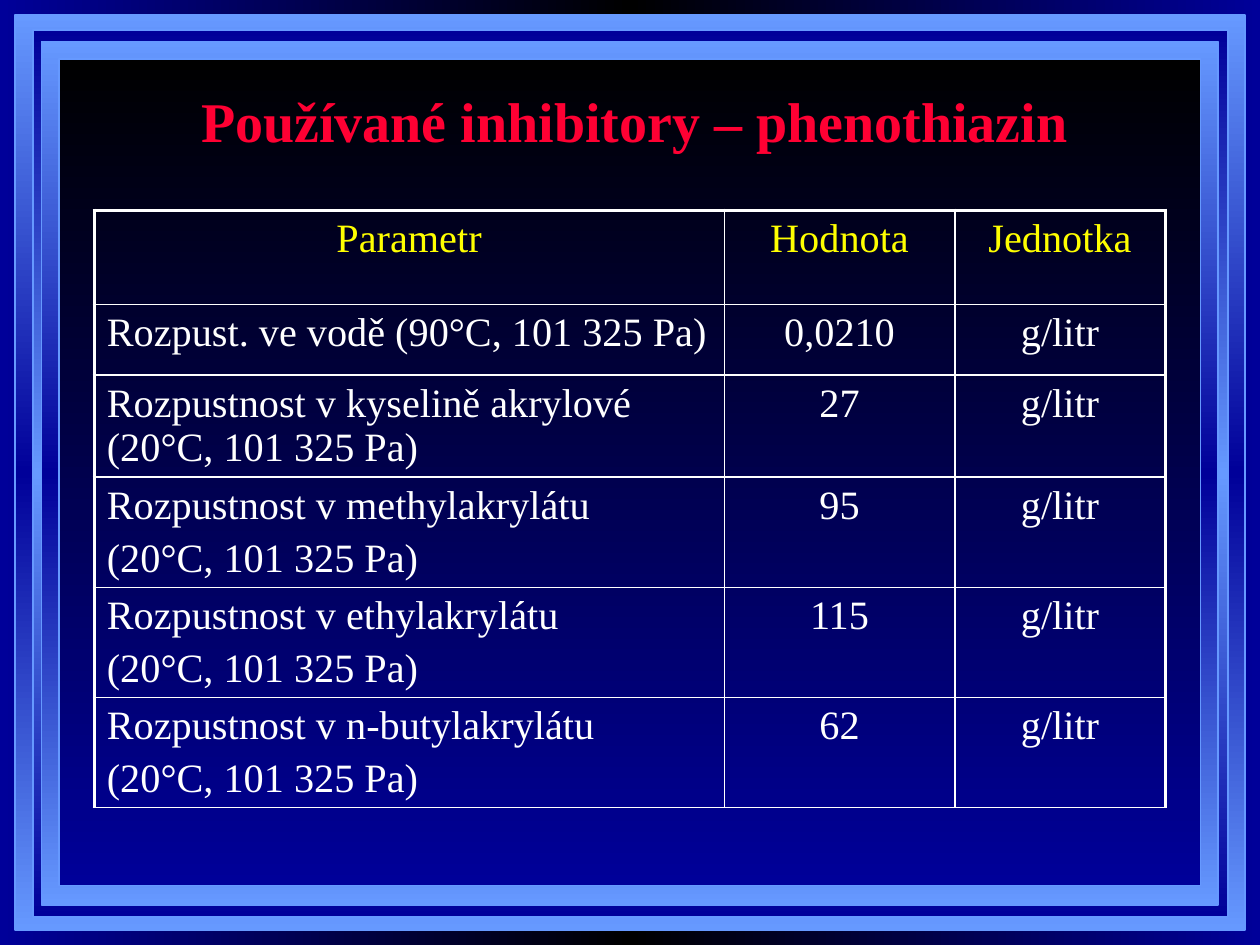
from copy import deepcopy

from lxml.etree import SubElement
from pptx import Presentation
from pptx.dml.color import RGBColor
from pptx.enum.shapes import MSO_SHAPE as Shape
from pptx.enum.text import MSO_ANCHOR as Anchor, MSO_AUTO_SIZE as AutoSize, PP_ALIGN as Align
from pptx.oxml.ns import qn
from pptx.util import Cm, Pt

NAVY = RGBColor(0x00, 0x00, 0x99)
SKY = RGBColor(0x66, 0x99, 0xFF)
BLACK = RGBColor(0x00, 0x00, 0x00)
RED = RGBColor(0xFF, 0x00, 0x33)
YELLOW = RGBColor(0xFF, 0xFF, 0x00)
WHITE = RGBColor(0xFF, 0xFF, 0xFF)

FONT = "Times New Roman"
THIN, THICK = Pt(1), Pt(2.25)

# Left, top, width, height in cm, then gradient colours from top to bottom
FRAMES = [
    (0.3, 0.3, 24.8, 18.45, (SKY, NAVY, SKY)),
    (0.66, 0.61, 24.1, 17.88, (NAVY, SKY, NAVY)),
    (0.84, 0.84, 23.72, 17.4, (SKY, NAVY, SKY)),
    (1.19, 1.19, 23.01, 16.66, (BLACK, NAVY)),
]

COLUMN_WIDTHS = (12.7, 4.65, 4.24)
HEADER_HEIGHT, ROW_HEIGHT = 1.9, 1.42
CONDITIONS = "(20°C, 101 325 Pa)"
ROWS = [
    ("Parametr", "Hodnota", "Jednotka"),
    ("Rozpust. ve vodě (90°C, 101 325 Pa)", "0,0210", "g/litr"),
    (f"Rozpustnost v kyselině akrylové {CONDITIONS}", "27", "g/litr"),
    (f"Rozpustnost v methylakrylátu\n{CONDITIONS}", "95", "g/litr"),
    (f"Rozpustnost v ethylakrylátu\n{CONDITIONS}", "115", "g/litr"),
    (f"Rozpustnost v n-butylakrylátu\n{CONDITIONS}", "62", "g/litr"),
]


def paint_gradient(fill, owner, colours, angle):
    """Spread the colours evenly; owner is the XML element that holds the fill."""
    fill.gradient()
    fill.gradient_angle = angle
    stop_list = owner.find(".//" + qn("a:gsLst"))
    while len(stop_list) < len(colours):
        stop_list.append(deepcopy(stop_list[0]))
    for index, (stop, colour) in enumerate(zip(fill.gradient_stops, colours)):
        stop.color.rgb = colour
        stop.position = index / (len(colours) - 1)


def add_frame(slide, left, top, width, height, colours):
    frame = slide.shapes.add_shape(
        Shape.RECTANGLE, Cm(left), Cm(top), Cm(width), Cm(height))
    frame.shadow.inherit = False
    paint_gradient(frame.fill, frame.element, colours, 270)
    frame.line.color.rgb = SKY
    frame.line.width = THIN


def style_font(font, size, colour, bold=False):
    font.name = FONT
    font.size = Pt(size)
    font.bold = bold
    font.color.rgb = colour


def set_title(slide, text):
    title = slide.shapes.title
    title.left, title.top, title.width, title.height = Cm(1.47), Cm(1.47), Cm(22.66), Cm(1.9)
    title.text_frame.text = text
    title.text_frame.auto_size = AutoSize.NONE
    title.text_frame.vertical_anchor = Anchor.MIDDLE
    heading = title.text_frame.paragraphs[0]
    heading.alignment = Align.CENTER
    style_font(heading.font, 32, RED, bold=True)
    # Bring the title in front of the frames
    slide.shapes.element.append(title.element)


def set_borders(cell, widths):
    properties = cell._tc.get_or_add_tcPr()
    for side, width in zip("LRTB", widths):
        line = SubElement(properties, qn(f"a:ln{side}"), w=str(int(width)))
        solid = SubElement(line, qn("a:solidFill"))
        SubElement(solid, qn("a:srgbClr"), val=str(WHITE))


def fill_cell(cell, text, colour, alignment):
    cell.text = text
    cell.fill.background()
    for index, paragraph in enumerate(cell.text_frame.paragraphs):
        paragraph.alignment = alignment
        if index:
            paragraph.space_before = Pt(4.6)
        style_font(paragraph.font, 23, colour)


def add_solubility_table(slide):
    height = HEADER_HEIGHT + ROW_HEIGHT * (len(ROWS) - 1)
    table = slide.shapes.add_table(
        len(ROWS), len(COLUMN_WIDTHS), Cm(1.9), Cm(4.24),
        Cm(sum(COLUMN_WIDTHS)), Cm(height)).table
    table.first_row = table.horz_banding = False
    for column, width in zip(table.columns, COLUMN_WIDTHS):
        column.width = Cm(width)
    last = len(COLUMN_WIDTHS) - 1
    for r, texts in enumerate(ROWS):
        header = r == 0
        table.rows[r].height = Cm(HEADER_HEIGHT if header else ROW_HEIGHT)
        for c, text in enumerate(texts):
            cell = table.cell(r, c)
            set_borders(cell, (THICK if c == 0 else THIN,
                               THICK if c == last else THIN,
                               THICK if header else THIN,
                               THIN))
            fill_cell(cell, text, YELLOW if header else WHITE,
                      Align.CENTER if header or c else Align.LEFT)


def main():
    deck = Presentation()
    deck.slide_width, deck.slide_height = Cm(25.4), Cm(19.05)
    slide = deck.slides.add_slide(deck.slide_layouts[5])
    paint_gradient(slide.background.fill, slide.element, (NAVY, BLACK, NAVY), 0)
    for frame in FRAMES:
        add_frame(slide, *frame)
    set_title(slide, "Používané inhibitory – phenothiazin")
    add_solubility_table(slide)
    deck.save("out.pptx")


if __name__ == "__main__":
    main()
